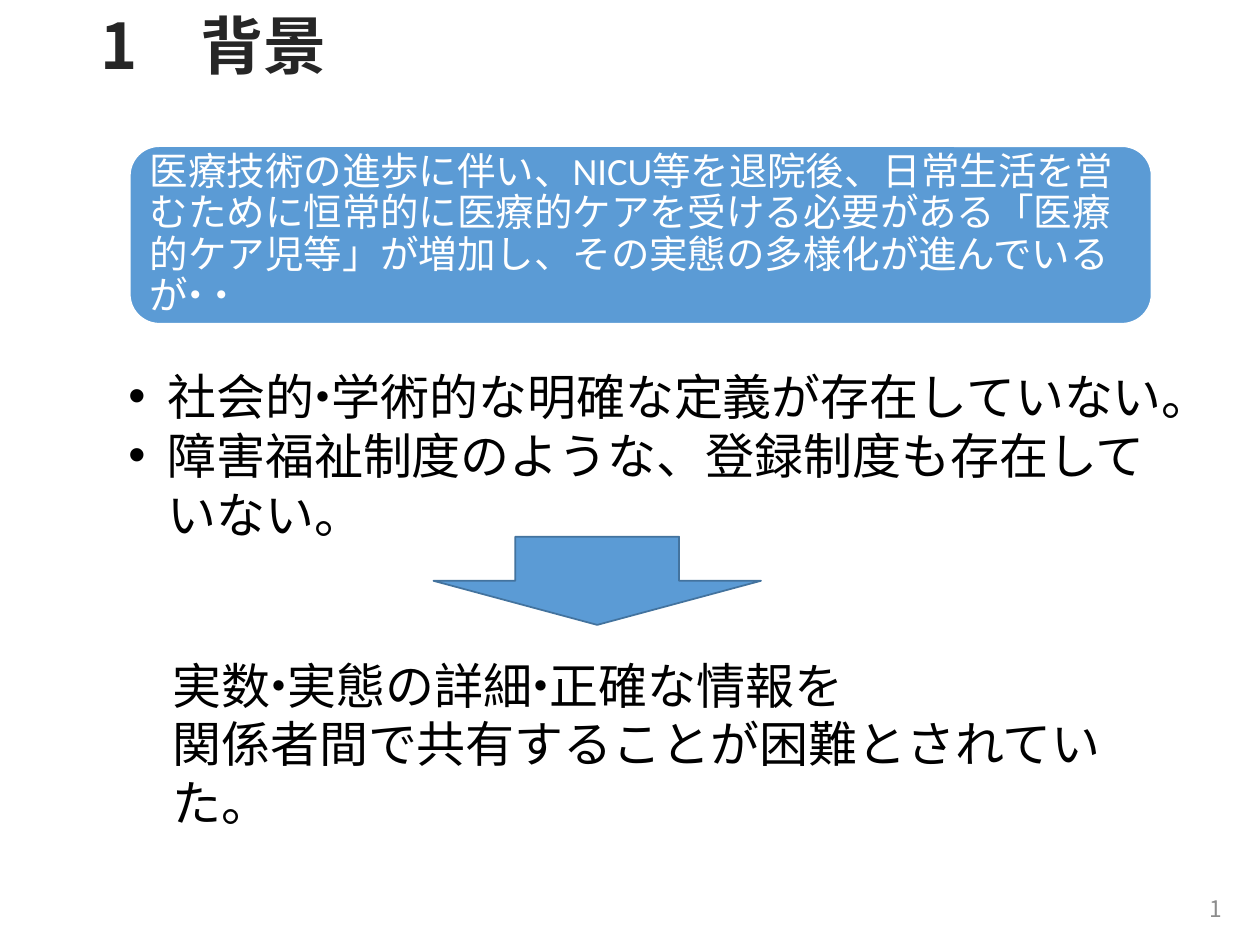
from dataclasses import dataclass

from lxml import etree
from pptx import Presentation
from pptx.dml.color import RGBColor
from pptx.enum import shapes, text
from pptx.oxml.ns import qn
from pptx.util import Inches, Pt

BLUE, WHITE, BLACK = "5B9BD5", "FFFFFF", "000000"
JAPANESE_FONT = "Noto Sans CJK JP"
MIDDLE_DOT = "・"
RUN_BREAK = "|"  # separates the runs of a line
DOT_TIGHTENING = -0.32  # share of the text size


@dataclass
class Box:
    left: float
    top: float
    width: float
    height: float

    def lengths(self) -> tuple:
        return tuple(Inches(v) for v in (self.left, self.top, self.width, self.height))


@dataclass
class Style:
    size: float
    color: str = BLACK
    font: str = "Calibri"
    bold: bool = False
    align: text.PP_ALIGN = text.PP_ALIGN.LEFT
    anchor: text.MSO_ANCHOR = text.MSO_ANCHOR.TOP
    bullet: bool = False
    spacing: float = 1.0
    grow: bool = False


def rgb(color: str) -> RGBColor:
    return RGBColor.from_string(color)


def add_bullet(paragraph) -> None:
    properties = paragraph._p.get_or_add_pPr()
    properties.set("marL", str(Inches(0.31)))
    properties.set("indent", str(Inches(-0.31)))
    etree.SubElement(properties, qn("a:buFont")).set("typeface", "Arial")
    etree.SubElement(properties, qn("a:buChar")).set("char", "•")


def add_run(paragraph, words: str, style: Style) -> None:
    run = paragraph.add_run()
    run.text = words
    run.font.size = Pt(style.size)
    run.font.bold = style.bold
    run.font.name = style.font
    run.font.color.rgb = rgb(style.color)
    properties = run._r.get_or_add_rPr()
    # East Asian characters follow the same font name
    etree.SubElement(properties, qn("a:ea")).set("typeface", style.font)
    # Middle dots sit close to their neighbours
    if MIDDLE_DOT in words:
        properties.set("spc", str(round(style.size * DOT_TIGHTENING) * 100))


def write(shape, lines: list[str], style: Style) -> None:
    frame = shape.text_frame
    frame.word_wrap = True
    frame.vertical_anchor = style.anchor
    frame.auto_size = (text.MSO_AUTO_SIZE.SHAPE_TO_FIT_TEXT if style.grow
                       else text.MSO_AUTO_SIZE.NONE)
    for index, line in enumerate(lines):
        paragraph = frame.add_paragraph() if index else frame.paragraphs[0]
        if style.bullet:
            add_bullet(paragraph)
        paragraph.alignment = style.align
        paragraph.line_spacing = style.spacing
        for words in line.split(RUN_BREAK):
            add_run(paragraph, words, style)


def add_text(parent, box: Box, lines: list[str], style: Style):
    shape = parent.add_textbox(*box.lengths())
    write(shape, lines, style)
    return shape


def add_block(parent, kind: shapes.MSO_SHAPE, box: Box, line: str) -> None:
    shape = parent.add_shape(kind, *box.lengths())
    shape.shadow.inherit = False
    shape.fill.solid()
    shape.fill.fore_color.rgb = rgb(BLUE)
    shape.line.color.rgb = rgb(line)
    shape.line.width = Pt(1)


def main() -> None:
    presentation = Presentation()
    presentation.slide_width, presentation.slide_height = Inches(10), Inches(7.5)
    slide = presentation.slides.add_slide(presentation.slide_layouts[5])
    middle = text.MSO_ANCHOR.MIDDLE

    # Title
    title = slide.shapes.title
    title.left, title.top, title.width, title.height = Box(0.7, 0, 7.11, 0.7).lengths()
    write(title, ["1　背景"],
          Style(36, "262626", JAPANESE_FONT, bold=True, anchor=middle))

    # Slide number
    add_text(slide.shapes, Box(7.55, 7.01, 2.25, 0.4), ["1"],
             Style(13, "8C8C8C", JAPANESE_FONT, align=text.PP_ALIGN.RIGHT, anchor=middle))

    # Missing definitions and registration
    add_text(slide.shapes, Box(0.92, 2.86, 8.55, 1.51),
             ["社会|的・学|術的な明確な定義が存在していない。",
              "障害福祉制度のような、登録制度も存在していない。"],
             Style(28, bullet=True, grow=True))

    # Background statement on a rounded panel
    panel = slide.shapes.add_group_shape().shapes
    add_block(panel, shapes.MSO_SHAPE.ROUNDED_RECTANGLE, Box(1.03, 1.16, 8.11, 1.41), WHITE)
    statement = add_text(
        panel, Box(1.1, 1.23, 7.97, 1.27),
        ["医療技術の進歩に伴い、NICU等を退院後、日常生活を営むために恒常的に"
         "医療的ケアを受ける必要がある「医療的ケア児等」が増加し、"
         "その実態の多様化が進んでいる|が・・"],
        Style(22, WHITE, anchor=middle, spacing=0.9))
    frame = statement.text_frame
    frame.margin_left = frame.margin_right = Inches(0.09)
    frame.margin_top = frame.margin_bottom = Inches(0.09)

    # Consequence and the arrow leading to it
    add_text(slide.shapes, Box(1.27, 5.15, 7.86, 1.04),
             ["実|数・実|態の詳|細・正|確な情報を",
              "関係者間で共有することが困難とされていた。"],
             Style(28, grow=True))
    add_block(slide.shapes, shapes.MSO_SHAPE.DOWN_ARROW, Box(3.44, 4.26, 2.6, 0.7), "43739E")

    presentation.save("out.pptx")


if __name__ == "__main__":
    main()
